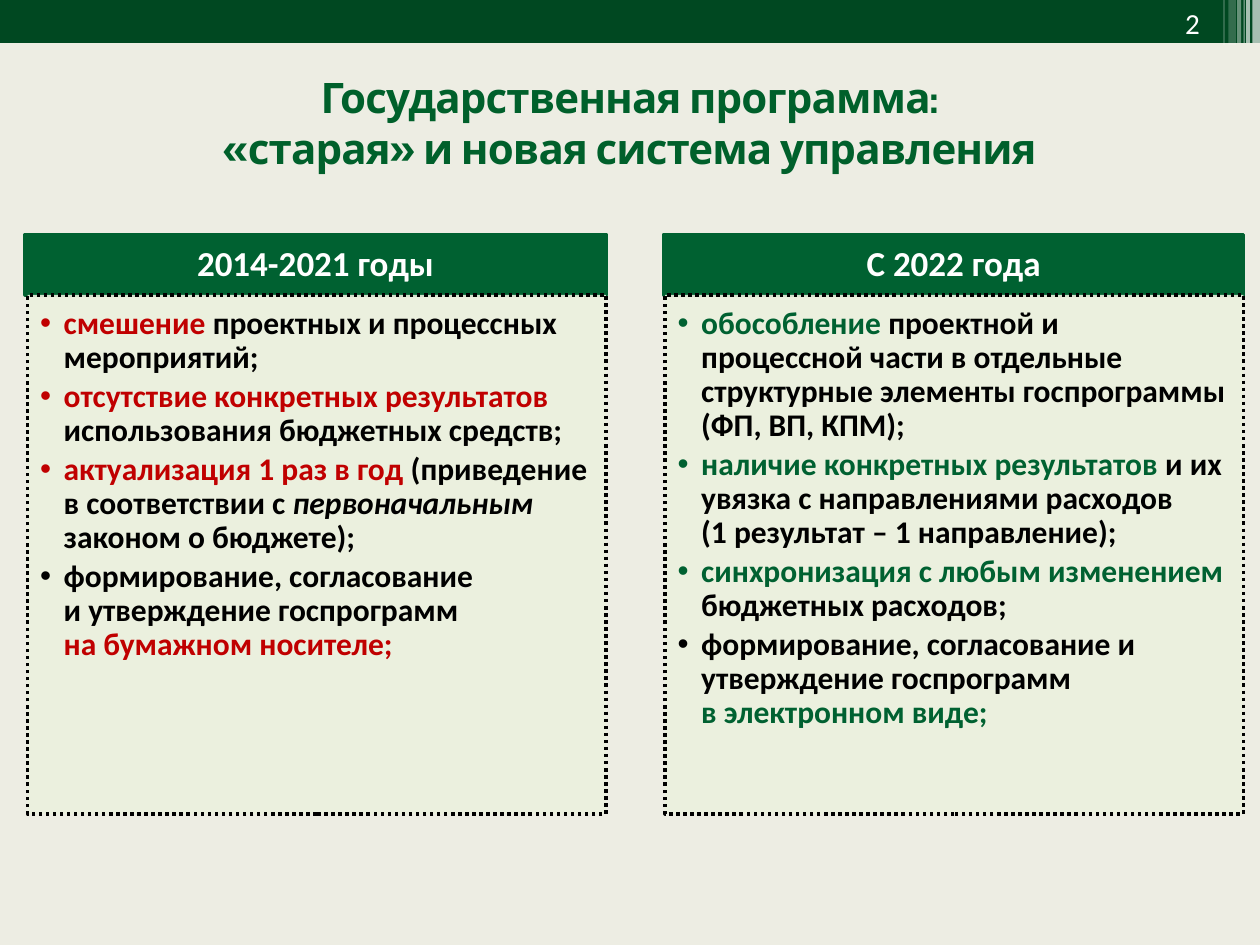
import pptx
import pptx.dml.color
import pptx.enum.dml
import pptx.enum.shapes
import pptx.enum.text
import pptx.oxml
import pptx.oxml.ns
import pptx.util

Pt = pptx.util.Pt
RGB = pptx.dml.color.RGBColor
ALIGN = pptx.enum.text.PP_ALIGN
ANCHOR = pptx.enum.text.MSO_ANCHOR

PAPER = RGB(0xED, 0xED, 0xE3)
BAR = RGB(0x00, 0x48, 0x21)
TITLE = RGB(0x00, 0x60, 0x2B)
GREEN = RGB(0x00, 0x61, 0x31)
PALE = RGB(0xEB, 0xF1, 0xDE)
RED = RGB(0xC0, 0x00, 0x00)
BLACK = RGB(0x00, 0x00, 0x00)
WHITE = RGB(0xFF, 0xFF, 0xFF)

BODY_W = 330.5
HEADER_H = 34.6
STRIPES = [
    (715.7, 4.3, 24.5, 65), (712.1, 2.2, 24.5, 65), (710.6, 0.7, 24.5, 60),
    (707, 2.2, 24.5, 40), (702, 4.3, 25.9, 20), (699.1, 0.7, 25.9, 30),
]
OLD = [
    [("смешение ", RED), ("проектных и процессных мероприятий;", BLACK)],
    [("отсутствие конкретных результатов ", RED),
     ("использования бюджетных средств;", BLACK)],
    [("актуализация 1 раз в год ", RED), ("(приведение в соответствии с ", BLACK),
     ("первоначальным", BLACK, True), (" законом о бюджете);", BLACK)],
    [("формирование, согласование \nи утверждение госпрограмм \n", BLACK),
     ("на бумажном носителе;", RED)],
]
NEW = [
    [("обособление ", GREEN),
     ("проектной и процессной части в отдельные структурные элементы "
      "госпрограммы (ФП, ВП, КПМ);", BLACK)],
    [("наличие конкретных результатов ", GREEN),
     ("и их увязка с направлениями расходов \n(1 результат – 1 направление);", BLACK)],
    [("синхронизация с любым изменением ", GREEN), ("бюджетных расходов;", BLACK)],
    [("формирование, согласование и утверждение госпрограмм \n", BLACK),
     ("в электронном виде;", GREEN)],
]


def add_text(p, text, size=18, color=BLACK, font="Calibri", bold=True,
             italic=False, spacing=None):
    """Append formatted text to a paragraph, breaking lines at newlines."""
    for i, line in enumerate(text.split("\n")):
        if i:
            p.add_line_break()
        if not line:
            continue
        r = p.add_run()
        r.text = line
        r.font.name, r.font.size = font, Pt(size)
        r.font.bold, r.font.italic = bold, italic
        r.font.color.rgb = color
        if spacing is not None:
            r.font._element.set("spc", str(round(spacing * 100)))


def set_frame(tf, anchor, insets):
    """Set wrapping, anchor and insets (left, top, right, bottom)."""
    tf.word_wrap = True
    tf.auto_size = pptx.enum.text.MSO_AUTO_SIZE.NONE
    tf.vertical_anchor = anchor
    tf.margin_left, tf.margin_top, tf.margin_right, tf.margin_bottom = map(Pt, insets)


def add_rect(s, x, y, w, h, fill, opacity=100, line=None, dash=None):
    """Add a flat rectangle with optional transparency and border."""
    sp = s.shapes.add_shape(pptx.enum.shapes.MSO_SHAPE.RECTANGLE,
                            Pt(x), Pt(y), Pt(w), Pt(h))
    sp.shadow.inherit = False
    sp.fill.solid()
    sp.fill.fore_color.rgb = fill
    if opacity < 100:
        clr = sp._element.spPr.find(".//" + pptx.oxml.ns.qn("a:srgbClr"))
        clr.append(pptx.oxml.parse_xml(
            f'<a:alpha {pptx.oxml.ns.nsdecls("a")} val="{opacity * 1000}"/>'))
    if line is None:
        sp.line.fill.background()
    else:
        sp.line.color.rgb = line
        sp.line.width = Pt(2)
        if dash is not None:
            sp.line.dash_style = dash
    return sp


def add_bullet(p):
    """Give a paragraph a hanging round bullet."""
    pPr = p._p.get_or_add_pPr()
    pPr.set("marL", str(Pt(13.5)))
    pPr.set("indent", str(-Pt(13.5)))
    ns = pptx.oxml.ns.nsdecls("a")
    pPr.append(pptx.oxml.parse_xml(f'<a:buFont {ns} typeface="Arial"/>'))
    pPr.append(pptx.oxml.parse_xml(f'<a:buChar {ns} char="•"/>'))
    p.line_spacing = 0.9
    p.space_after = Pt(2.8)


def add_top_bar(s, w, h, number):
    """Draw the top bar with its right-hand stripes and the page number."""
    add_rect(s, 0, 0, w, h, BAR)
    for x, stripe_w, stripe_h, opacity in STRIPES:
        add_rect(s, x, 0, stripe_w, stripe_h, WHITE, opacity)
    tf = s.shapes.add_textbox(Pt(w - 195.1), Pt(-1.4), Pt(167.8), Pt(28.8)).text_frame
    set_frame(tf, ANCHOR.MIDDLE, (7.2, 3.6, 7.2, 3.6))
    tf.paragraphs[0].alignment = ALIGN.RIGHT
    add_text(tf.paragraphs[0], number, size=16.6, color=WHITE, bold=False)


def add_title(s, x, y, w, h, lines):
    """Place the title placeholder and fill it line by line."""
    sp = s.shapes.title
    sp.left, sp.top, sp.width, sp.height = Pt(x), Pt(y), Pt(w), Pt(h)
    tf = sp.text_frame
    set_frame(tf, ANCHOR.TOP, (7.2, 3.6, 7.2, 3.6))
    for i, line in enumerate(lines):
        p = tf.add_paragraph() if i else tf.paragraphs[0]
        p.alignment = ALIGN.CENTER
        p.space_before = Pt(0)
        add_text(p, line, size=24, color=TITLE, font="Cabin", spacing=-0.5)


def add_column(s, x, y, w, h, heading, items):
    """Draw a heading band above a dotted box of bullets."""
    band = add_rect(s, x, y, w, HEADER_H, GREEN, line=GREEN)
    set_frame(band.text_frame, ANCHOR.MIDDLE, (11.5, 6.5, 11.5, 6.5))
    p = band.text_frame.paragraphs[0]
    p.alignment = ALIGN.CENTER
    p.line_spacing = 0.9
    add_text(p, heading, size=20, color=WHITE)

    body = add_rect(s, x + w - BODY_W, y + HEADER_H, BODY_W, h - HEADER_H, PALE, 90,
                    BLACK, pptx.enum.dml.MSO_LINE.ROUND_DOT)
    tf = body.text_frame
    set_frame(tf, ANCHOR.TOP, (7.2, 7.2, 10.1, 11.5))
    for i, item in enumerate(items):
        p = tf.add_paragraph() if i else tf.paragraphs[0]
        p.alignment = ALIGN.LEFT
        add_bullet(p)
        for text, color, *italic in item:
            add_text(p, text, color=color, italic=bool(italic))


def main():
    """Build the slide and save it."""
    prs = pptx.Presentation()
    prs.slide_width, prs.slide_height = Pt(720), Pt(540)
    s = prs.slides.add_slide(prs.slide_layouts[5])
    s.background.fill.solid()
    s.background.fill.fore_color.rgb = PAPER
    add_top_bar(s, 720, 24.5, "2")
    add_title(s, 0, 37.4, 720, 65.5,
              ["Государственная программа:", "«старая» и новая система управления"])
    add_column(s, 14.4, 133.9, 331.9, 331.2, "2014-2021 годы", OLD)
    add_column(s, 379.4, 133.9, 331.2, 331.2, "С 2022 года", NEW)
    prs.save("out.pptx")


if __name__ == "__main__":
    main()
